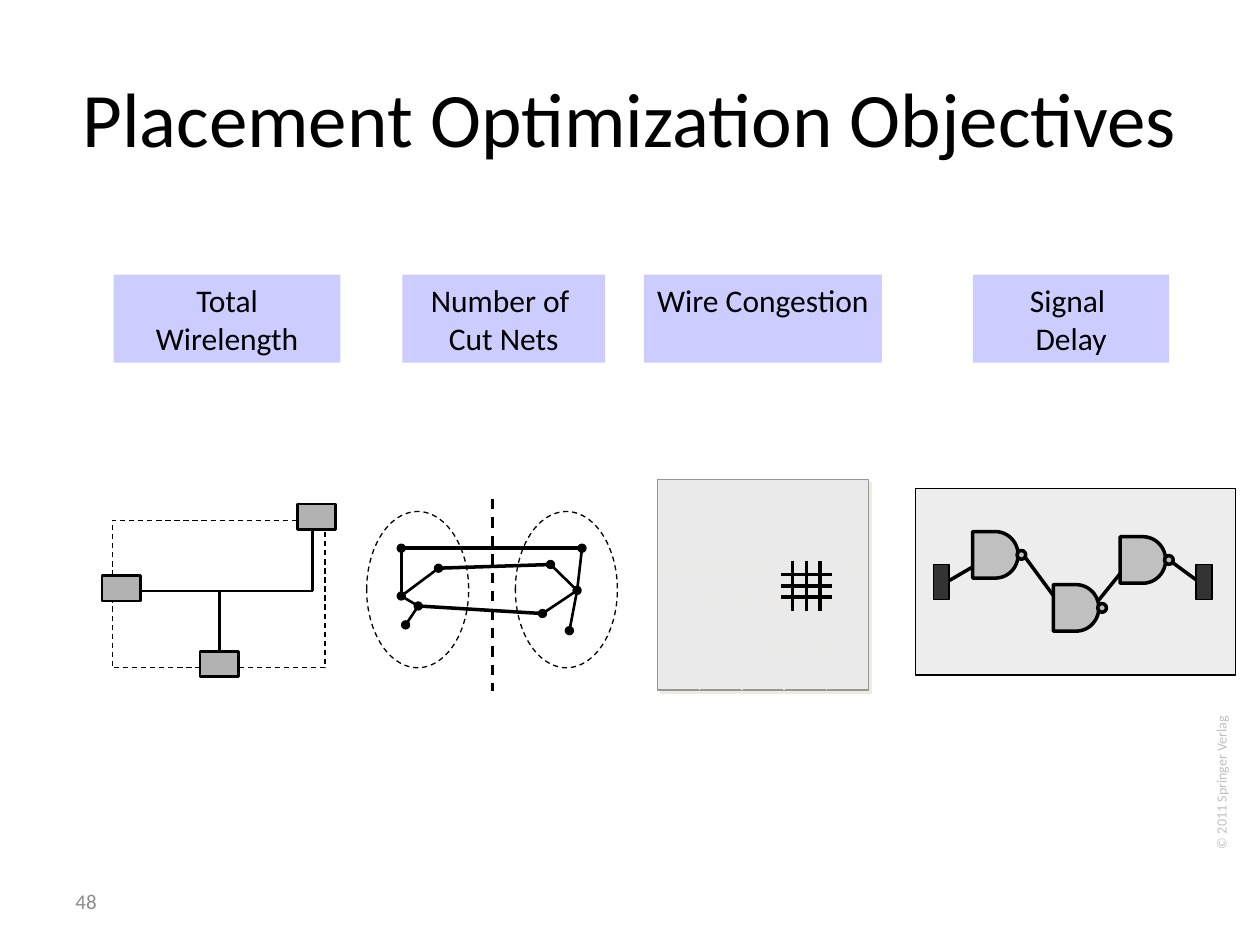
import pptx
import pptx.util
import pptx.dml.color
import pptx.enum.dml
import pptx.enum.shapes
import pptx.enum.text
import pptx.oxml

Pt = pptx.util.Pt
KIND = pptx.enum.shapes.MSO_SHAPE
DASH = pptx.enum.dml.MSO_LINE.DASH
DOT = pptx.enum.dml.MSO_LINE.ROUND_DOT
CENTER = pptx.enum.text.PP_ALIGN.CENTER
LEFT = pptx.enum.text.PP_ALIGN.LEFT
MIDDLE = pptx.enum.text.MSO_ANCHOR.MIDDLE
TOP = pptx.enum.text.MSO_ANCHOR.TOP

THEME = {
    "font": "Calibri", "black": "000000", "label": "CCCCFF", "cell": "B2B2B2",
    "gate": "C0C0C0", "port": "333333", "panel": "EDEDED", "region": "EAEAEA",
    "edge": "969696", "grid": "EEECE1", "number": "8C8C8C", "credit": "C0C0C0",
    "title_size": 44, "label_size": 18, "number_size": 12, "credit_size": 8,
    "thin": 0.75, "medium": 1.5, "thick": 2,
}

TITLE = "Placement Optimization Objectives"
PAGE_NUMBER = "48"
CREDIT = "© 2011 Springer Verlag"
LABELS = [
    (["Total Wirelength"], 65, 129.6),
    (["Number of ", "Cut Nets"], 229.9, 115.9),
    (["Wire Congestion"], 368, 136),
    (["Signal ", "Delay"], 556, 112.2),
]
LABEL_TOP, LABEL_HEIGHT = 156.9, 50.4

BOUNDING_BOX = (64.1, 297.4, 121.7, 84.2)
CELLS = [(169.9, 288), (58.3, 329), (114.2, 372.2)]
CELL_SIZE = (22, 14.5)
TRUNK_Y = 337.7
WIRES = [
    ((178.6, 303), (178.6, TRUNK_Y)),
    ((178.6, TRUNK_Y), (80.6, TRUNK_Y)),
    ((125.3, 372.2), (125.3, TRUNK_Y)),
]

PARTITIONS = [(209.5, 292.3, 58.3, 89.3), (294.5, 292.3, 58.3, 89.3)]
PIN_SIZE = 4.6
PINS = {
    "L1": (229.3, 313.3), "L2": (250.6, 324.7), "L3": (229.3, 340.6),
    "L4": (239, 346.3), "L5": (231.8, 357.1),
    "R1": (332.6, 313.3), "R2": (329.8, 337.4), "R3": (325.4, 360.4),
    "R4": (314.6, 322.6), "R5": (310, 350.6),
}
INNER_NETS = ["R1 R2", "R2 R3", "R2 R4", "R2 R5", "L1 L3", "L2 L3", "L3 L4", "L4 L5"]
CUT_NETS = ["L1 R1", "L2 R4", "L4 R5"]
CUT_LINE = ((281.5, 285.1), (281.5, 394.6))

REGION_LEFT, REGION_TOP, REGION_SIZE, REGION_PARTS = 375.8, 274, 120.4, 5
MESH_CENTER, MESH_SIZE = (460.8, 334.8), 28.8
MESH_GAP_X, MESH_GAP_Y = 7.9, 6.5

DELAY_PANEL = (523.2, 279.2, 183, 106.6)
PORTS = [(533.6, 322.4, 8.8, 20.4), (683.4, 322.4, 9.2, 20.4)]
SIGNALS = [
    ((542.2, 331.9), (568.1, 316.8)),
    ((584.6, 316.8), (604.8, 344.2)),
    ((622.8, 349.2), (643.7, 323.3)),
    ((666.7, 319), (683.3, 331.2)),
]
GATES = [(555.8, 303.8), (640.1, 306.7), (601.9, 334.1)]
GATE_SIZE = (26, 26.6)
BUBBLE_SIZE = 5

deck = pptx.Presentation()
deck.slide_width, deck.slide_height = Pt(720), Pt(540)
page = deck.slides.add_slide(deck.slide_layouts[5])


def color(name):
    return pptx.dml.color.RGBColor.from_string(THEME[name])


def style_line(line, ink, width, dash=None):
    line.color.rgb = color(ink)
    line.width = Pt(THEME[width])
    if dash is not None:
        line.dash_style = dash


def draw_shape(kind, frame, fill=None, ink=None, width="thin", dash=None):
    shape = page.shapes.add_shape(kind, *map(Pt, frame))
    shape.shadow.inherit = False
    if fill:
        shape.fill.solid()
        shape.fill.fore_color.rgb = color(fill)
    else:
        shape.fill.background()
    if ink:
        style_line(shape.line, ink, width, dash)
    else:
        shape.line.fill.background()
    return shape


def draw_line(start, end, width="medium", ink="black", dash=None):
    line = page.shapes.add_connector(
        pptx.enum.shapes.MSO_CONNECTOR.STRAIGHT, *map(Pt, (*start, *end)))
    style_line(line.line, ink, width, dash)
    pptx.oxml.xmlchemy.OxmlElement
    line._element.spPr.append(pptx.oxml.parse_xml(
        '<a:effectLst xmlns:a="http://schemas.openxmlformats.org/drawingml/2006/main"/>'))


def write(box, lines, size, ink, align, anchor, wrap=True):
    box.text_frame.word_wrap = wrap
    box.text_frame.vertical_anchor = anchor
    para = box.text_frame.paragraphs[0]
    para.alignment = align
    for index, text in enumerate(lines):
        if index:
            para.add_line_break()
        span = para.add_run()
        span.text = text
        span.font.name = THEME["font"]
        span.font.size = Pt(THEME[size])
        span.font.color.rgb = color(ink)


def draw_texts():
    title = page.shapes.title
    title.left, title.top, title.width, title.height = map(Pt, (36, 21.6, 648, 90))
    write(title, [TITLE], "title_size", "black", CENTER, MIDDLE)
    for lines, left, width in LABELS:
        label = draw_shape(KIND.RECTANGLE, (left, LABEL_TOP, width, LABEL_HEIGHT), "label")
        write(label, lines, "label_size", "black", CENTER, TOP)
    number = page.shapes.add_textbox(*map(Pt, (36, 500.5, 168, 28.8)))
    write(number, [PAGE_NUMBER], "number_size", "number", LEFT, MIDDLE)
    credit = page.shapes.add_textbox(*map(Pt, (648.7, 434.9, 98, 16.6)))
    credit.rotation = 270
    write(credit, [CREDIT], "credit_size", "credit", LEFT, TOP, wrap=False)


def draw_wirelength():
    draw_shape(KIND.RECTANGLE, BOUNDING_BOX, None, "black", "thin", DASH)
    for start, end in WIRES:
        draw_line(start, end)
    for corner in CELLS:
        draw_shape(KIND.RECTANGLE, (*corner, *CELL_SIZE), "cell", "black", "medium")


def draw_cut_nets():
    for frame in PARTITIONS:
        draw_shape(KIND.OVAL, frame, None, "black", "thin", DASH)
    for x, y in PINS.values():
        frame = (x - PIN_SIZE / 2, y - PIN_SIZE / 2, PIN_SIZE, PIN_SIZE)
        draw_shape(KIND.OVAL, frame, "black", "black")
    for nets, width in ((INNER_NETS, "medium"), (CUT_NETS, "thick")):
        for net in nets:
            start, end = net.split()
            draw_line(PINS[start], PINS[end], width)
    draw_line(*CUT_LINE, dash=DASH)


def draw_congestion():
    region = draw_shape(KIND.RECTANGLE, (REGION_LEFT, REGION_TOP, REGION_SIZE, REGION_SIZE),
                        "region", "edge")
    effects = region._element.spPr.find(pptx.oxml.ns.qn("a:effectLst"))
    effects.append(pptx.oxml.parse_xml(
        '<a:outerShdw xmlns:a="http://schemas.openxmlformats.org/drawingml/2006/main"'
        f' dist="{Pt(2.8)}" dir="2700000" algn="ctr" rotWithShape="0">'
        f'<a:srgbClr val="{THEME["grid"]}"/></a:outerShdw>'))
    right, bottom = REGION_LEFT + REGION_SIZE, REGION_TOP + REGION_SIZE
    for part in range(1, REGION_PARTS):
        step = part * REGION_SIZE / REGION_PARTS
        x, y = REGION_LEFT + step, REGION_TOP + step
        draw_line((x, bottom), (x, REGION_TOP), "thin", "grid", DOT)
        draw_line((REGION_LEFT, y), (right, y), "thin", "grid", DOT)
    center_x, center_y = MESH_CENTER
    half = MESH_SIZE / 2
    for track in (-1, 0, 1):
        x, y = center_x + track * MESH_GAP_X, center_y + track * MESH_GAP_Y
        draw_line((center_x - half, y), (center_x + half, y), "thick")
        draw_line((x, center_y - half), (x, center_y + half), "thick")


def draw_delay():
    draw_shape(KIND.RECTANGLE, DELAY_PANEL, "panel", "black")
    for frame in PORTS:
        draw_shape(KIND.RECTANGLE, frame, "port", "black")
    for start, end in SIGNALS:
        draw_line(start, end, "thick")
    width, height = GATE_SIZE
    for left, top in GATES:
        draw_shape(KIND.FLOWCHART_DELAY, (left, top, width, height), "gate", "black", "thick")
        bubble = (left + width - 0.6, top + (height - BUBBLE_SIZE) / 2, BUBBLE_SIZE, BUBBLE_SIZE)
        draw_shape(KIND.FLOWCHART_CONNECTOR, bubble, "gate", "black", "thick")


draw_texts()
draw_wirelength()
draw_cut_nets()
draw_congestion()
draw_delay()
deck.save("out.pptx")
